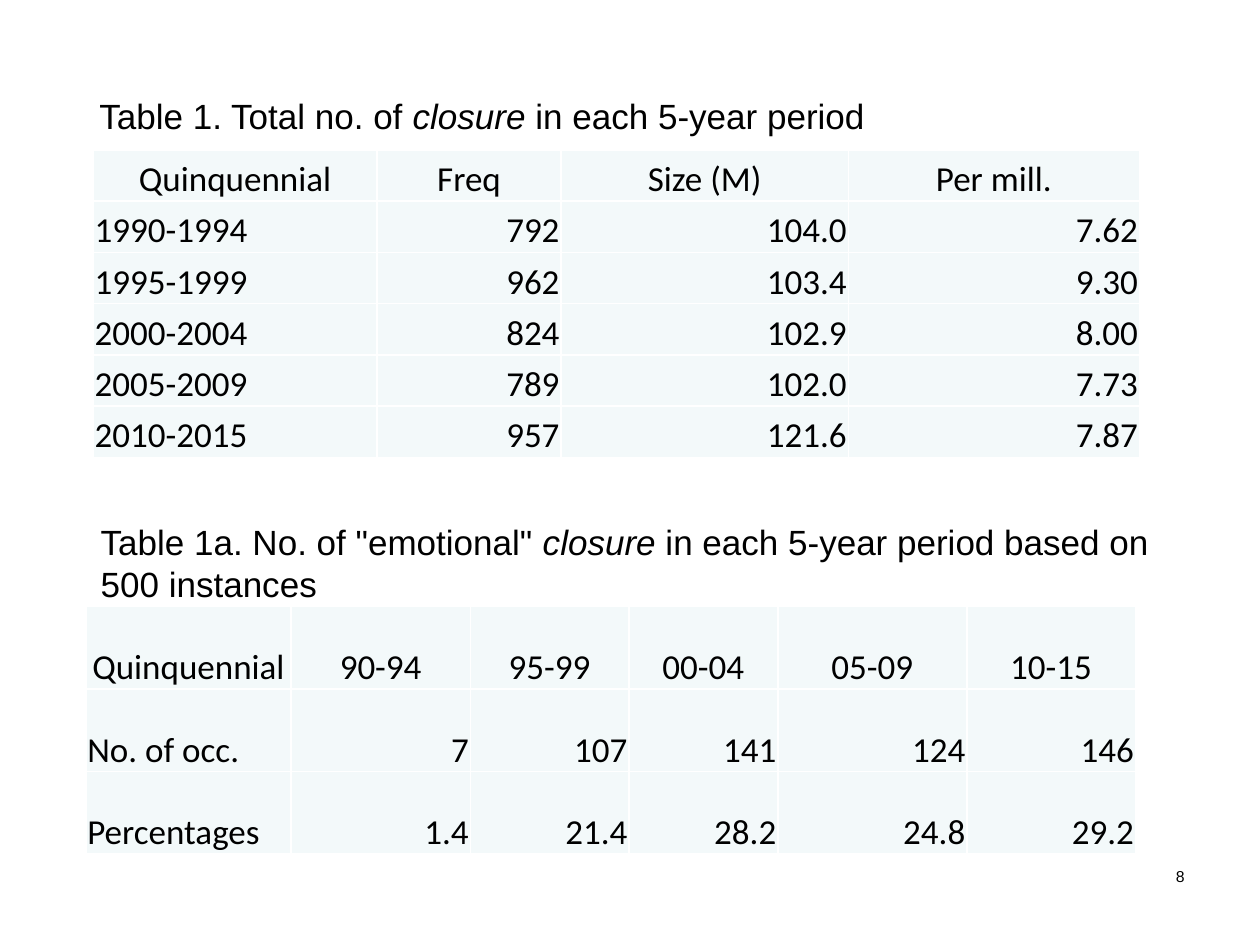
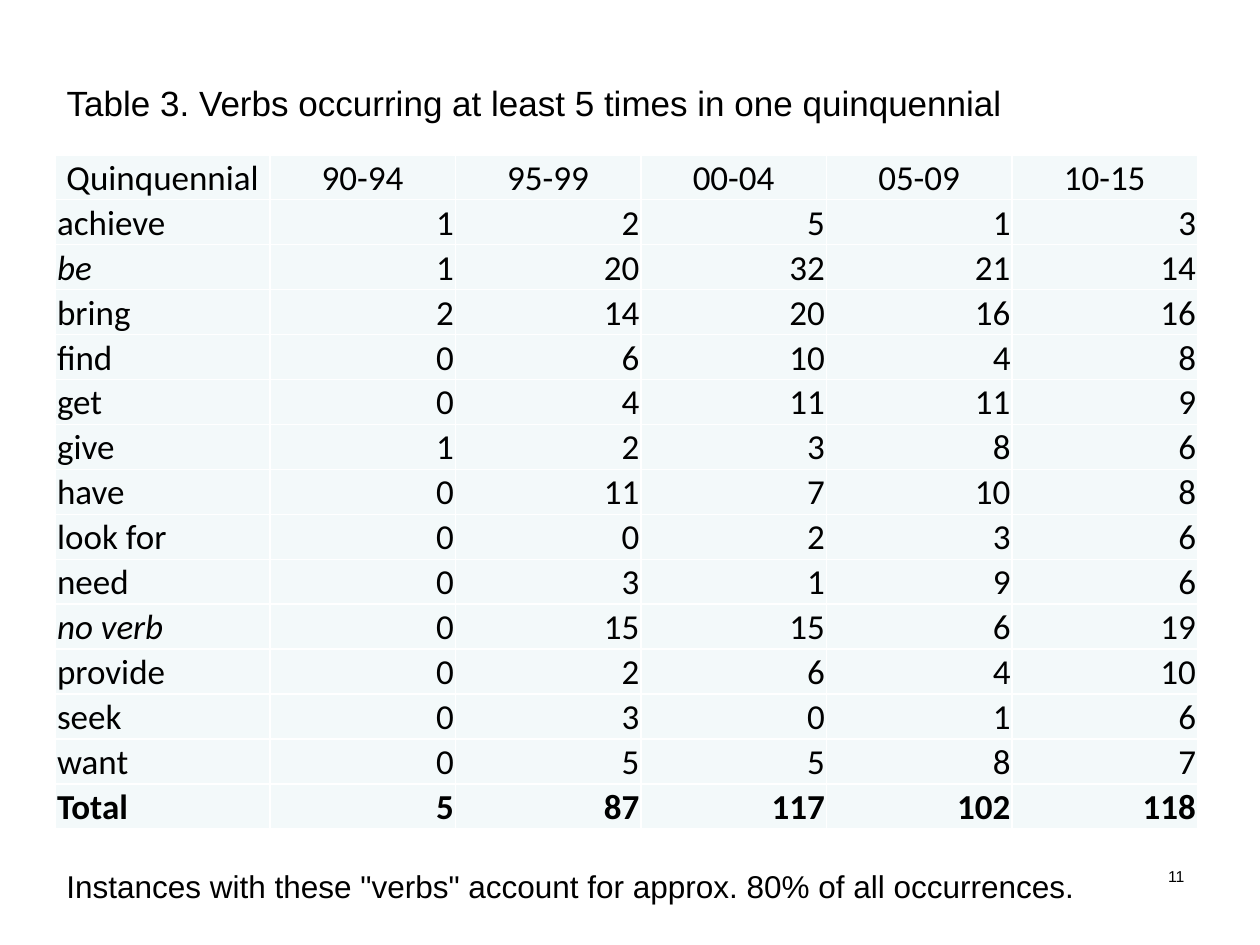
import pptx
import pptx.dml.color
import pptx.enum.text
import pptx.oxml
import pptx.oxml.ns
import pptx.util
from pptx.util import Cm

BLACK = pptx.dml.color.RGBColor(0x00, 0x00, 0x00)
WHITE = pptx.dml.color.RGBColor(0xFF, 0xFF, 0xFF)
PALE_TEAL = pptx.dml.color.RGBColor(0xF3, 0xF9, 0xFA)

LEFT = pptx.enum.text.PP_ALIGN.LEFT
CENTER = pptx.enum.text.PP_ALIGN.CENTER
RIGHT = pptx.enum.text.PP_ALIGN.RIGHT

TITLE_ONLY_LAYOUT = 5
PERIODS = ["90-94", "95-99", "00-04", "05-09", "10-15"]

CLOSURES = [
    ["Quinquennial", "Freq", "Size (M)", "Per mill."],
    ["1990-1994", "792", "104.0", "7.62"],
    ["1995-1999", "962", "103.4", "9.30"],
    ["2000-2004", "824", "102.9", "8.00"],
    ["2005-2009", "789", "102.0", "7.73"],
    ["2010-2015", "957", "121.6", "7.87"],
]
EMOTIONAL_CLOSURES = [
    ["Quinquennial", *PERIODS],
    ["No. of occ.", "7", "107", "141", "124", "146"],
    ["Percentages", "1.4", "21.4", "28.2", "24.8", "29.2"],
]
VERB_COUNTS = {
    "achieve": [1, 2, 5, 1, 3],
    "*be*": [1, 20, 32, 21, 14],
    "bring": [2, 14, 20, 16, 16],
    "find": [0, 6, 10, 4, 8],
    "get": [0, 4, 11, 11, 9],
    "give": [1, 2, 3, 8, 6],
    "have": [0, 11, 7, 10, 8],
    "look for": [0, 0, 2, 3, 6],
    "need": [0, 3, 1, 9, 6],
    "*no verb*": [0, 15, 15, 6, 19],
    "provide": [0, 2, 6, 4, 10],
    "seek": [0, 3, 0, 1, 6],
    "want": [0, 5, 5, 8, 7],
}


class Deck:
    text_font = "Arial"
    table_font = "Calibri"
    text_size = 20

    def __init__(self):
        self.presentation = pptx.Presentation()
        self.presentation.slide_width = Cm(25.4)
        self.presentation.slide_height = Cm(19.05)
        self.slide = None

    def add_slide(self, number):
        layout = self.presentation.slide_layouts[TITLE_ONLY_LAYOUT]
        self.slide = self.presentation.slides.add_slide(layout)
        self.slide.background.fill.solid()
        self.slide.background.fill.fore_color.rgb = WHITE
        self.text(str(number), Cm(22.23), Cm(17.35), Cm(1.9), Cm(1.27), size=9, alignment=RIGHT)

    def set_text(self, frame, text, font_name, size, alignment, bold=False):
        paragraph = frame.paragraphs[0]
        paragraph.alignment = alignment
        paragraph.font.name = font_name
        paragraph.font.size = pptx.util.Pt(size)
        paragraph.font.bold = bold
        paragraph.font.color.rgb = BLACK
        for index, part in enumerate(text.split("*")):
            if part:
                run = paragraph.add_run()
                run.text = part
                if index % 2:
                    run.font.italic = True

    def fill_frame(self, shape, text, size, alignment):
        frame = shape.text_frame
        frame.word_wrap = True
        frame.auto_size = pptx.enum.text.MSO_AUTO_SIZE.NONE
        frame.vertical_anchor = pptx.enum.text.MSO_ANCHOR.TOP
        self.set_text(frame, text, self.text_font, size, alignment)

    def title(self, text, left, top, width, height):
        shape = self.slide.shapes.title
        shape.left, shape.top, shape.width, shape.height = left, top, width, height
        self.fill_frame(shape, text, self.text_size, LEFT)

    def text(self, text, left, top, width, height, size=text_size, alignment=LEFT):
        shape = self.slide.shapes.add_textbox(left, top, width, height)
        self.fill_frame(shape, text, size, alignment)

    def table(self, rows, left, top, column_widths, height, bold_last_row=False):
        shape = self.slide.shapes.add_table(
            len(rows), len(column_widths), left, top, sum(column_widths), height)
        table = shape.table
        table.first_row = False
        table.horz_banding = False
        for column, width in zip(table.columns, column_widths):
            column.width = width
        for row_index, values in enumerate(rows):
            table.rows[row_index].height = height // len(rows)
            bold = bold_last_row and row_index == len(rows) - 1
            for column_index, value in enumerate(values):
                if row_index == 0:
                    alignment = CENTER
                else:
                    alignment = RIGHT if column_index else LEFT
                cell = table.cell(row_index, column_index)
                self.style_cell(cell)
                self.set_text(cell.text_frame, value, self.table_font, self.text_size, alignment, bold)

    def style_cell(self, cell):
        cell.vertical_anchor = pptx.enum.text.MSO_ANCHOR.BOTTOM
        cell.margin_left = cell.margin_right = cell.margin_top = Cm(0.03)
        cell.margin_bottom = 0
        properties = cell._tc.get_or_add_tcPr()
        for side in ("lnL", "lnR", "lnT", "lnB"):
            properties.append(pptx.oxml.parse_xml(
                f'<a:{side} {pptx.oxml.ns.nsdecls("a")} w="{pptx.util.Pt(1)}"><a:solidFill>'
                f'<a:srgbClr val="{WHITE}"/></a:solidFill></a:{side}>'))
        cell.fill.solid()
        cell.fill.fore_color.rgb = PALE_TEAL


def add_closure_slide(deck):
    deck.add_slide(8)
    deck.title("Table 1. Total no. of *closure* in each 5-year period",
               Cm(1.75), Cm(1.78), Cm(21.69), Cm(1.12))
    deck.table(CLOSURES, Cm(1.88), Cm(3.02),
               [Cm(width) for width in (5.72, 3.71, 5.79, 5.87)], Cm(6.2))
    deck.text('Table 1a. No. of "emotional" *closure* in each 5-year period based on 500 instances',
              Cm(1.78), Cm(10.36), Cm(21.69), Cm(1.96))
    deck.table(EMOTIONAL_CLOSURES, Cm(1.73), Cm(12.22),
               [Cm(width) for width in (4.14, 3.61, 3.2, 3, 3.81, 3.4)], Cm(5))


def add_verb_slide(deck):
    deck.add_slide(11)
    deck.title("Table 3. Verbs occurring at least 5 times in one quinquennial",
               Cm(1.09), Cm(1.52), Cm(20.6), Cm(1.12))
    totals = [sum(counts) for counts in zip(*VERB_COUNTS.values())]
    rows = [["Quinquennial", *PERIODS]]
    for verb, counts in [*VERB_COUNTS.items(), ("Total", totals)]:
        rows.append([verb, *map(str, counts)])
    deck.table(rows, Cm(1.12), Cm(3.12), [Cm(4.32)] + [Cm(3.74)] * len(PERIODS),
               Cm(13.59), bold_last_row=True)
    deck.text('Instances with these "verbs" account for approx. 80% of all occurrences.',
              Cm(1.09), Cm(17.35), Cm(22.6), Cm(1.02), size=18)


def main():
    deck = Deck()
    add_closure_slide(deck)
    add_verb_slide(deck)
    deck.presentation.save("out.pptx")


if __name__ == "__main__":
    main()
